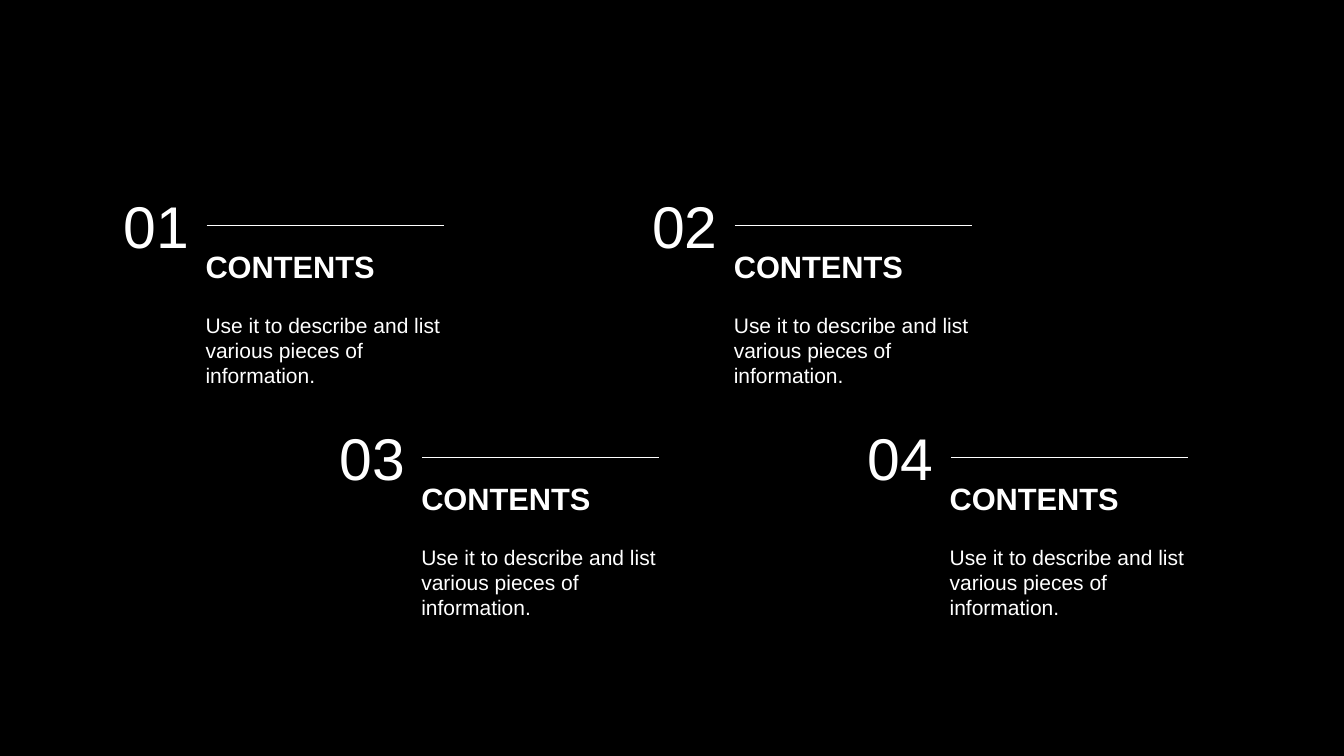
from dataclasses import dataclass

import pptx
import pptx.dml.color
import pptx.enum.shapes
import pptx.enum.text
import pptx.oxml
import pptx.util
from pptx.util import Inches


@dataclass(frozen=True)
class Theme:
    background: str = "000000"
    ink: str = "FFFFFF"
    font: str = "Arial"
    number_size: int = 42
    heading_size: int = 22
    body_size: int = 15
    rule_width: float = 0.75


THEME = Theme()

ITEMS = [
    (number, "CONTENTS", "Use it to describe and list various pieces of information.")
    for number in ("01", "02", "03", "04")
]
COLUMNS = 2
FIRST_LEFT, FIRST_TOP = 1.13, 1.83
COLUMN_STEP, ROW_STEP = 5.24, 2.3
ROW_INDENT = 2.14


def rgb(value):
    return pptx.dml.color.RGBColor.from_string(value)


def add_text(shapes, box, text, size, bold=False, wrap=True):
    frame = shapes.add_textbox(*map(Inches, box)).text_frame
    frame.word_wrap = wrap
    frame.auto_size = pptx.enum.text.MSO_AUTO_SIZE.SHAPE_TO_FIT_TEXT
    run = frame.paragraphs[0].add_run()
    run.text = text
    font_format = {"name": THEME.font, "size": pptx.util.Pt(size), "bold": bold}
    for attribute, value in font_format.items():
        setattr(run.font, attribute, value)
    run.font.color.rgb = rgb(THEME.ink)


def add_rule(shapes, left, top, width):
    rule = shapes.add_connector(
        pptx.enum.shapes.MSO_CONNECTOR.STRAIGHT,
        Inches(left), Inches(top), Inches(left + width), Inches(top),
    )
    rule.line.color.rgb = rgb(THEME.ink)
    rule.line.width = pptx.util.Pt(THEME.rule_width)
    properties = rule.element.spPr
    properties.append(properties.makeelement(pptx.oxml.ns.qn("a:effectLst"), {}))


def add_item(slide, left, top, number, heading, description):
    """Group one numbered entry whose top left corner is at left, top."""
    shapes = slide.shapes.add_group_shape().shapes
    text_left = left + 0.81
    add_text(shapes, (left, top, 1.06, 0.81), number, THEME.number_size)
    add_text(shapes, (text_left, top + 0.58, 1.95, 0.47), heading,
             THEME.heading_size, bold=True, wrap=False)
    add_text(shapes, (text_left, top + 1.22, 2.65, 0.86), description, THEME.body_size)
    add_rule(shapes, left + 0.92, top + 0.41, 2.35)


def add_contents(slide):
    """Lay the entries out in rows, each row indented from the one above."""
    for index, item in enumerate(ITEMS):
        row, column = divmod(index, COLUMNS)
        left = FIRST_LEFT + column * COLUMN_STEP + row * ROW_INDENT
        add_item(slide, left, FIRST_TOP + row * ROW_STEP, *item)


def main():
    deck = pptx.Presentation()
    deck.slide_width, deck.slide_height = Inches(13.33), Inches(7.5)
    slide = deck.slides.add_slide(deck.slide_layouts[6])
    slide.background.fill.solid()
    slide.background.fill.fore_color.rgb = rgb(THEME.background)
    add_contents(slide)
    deck.save("out.pptx")


if __name__ == "__main__":
    main()
